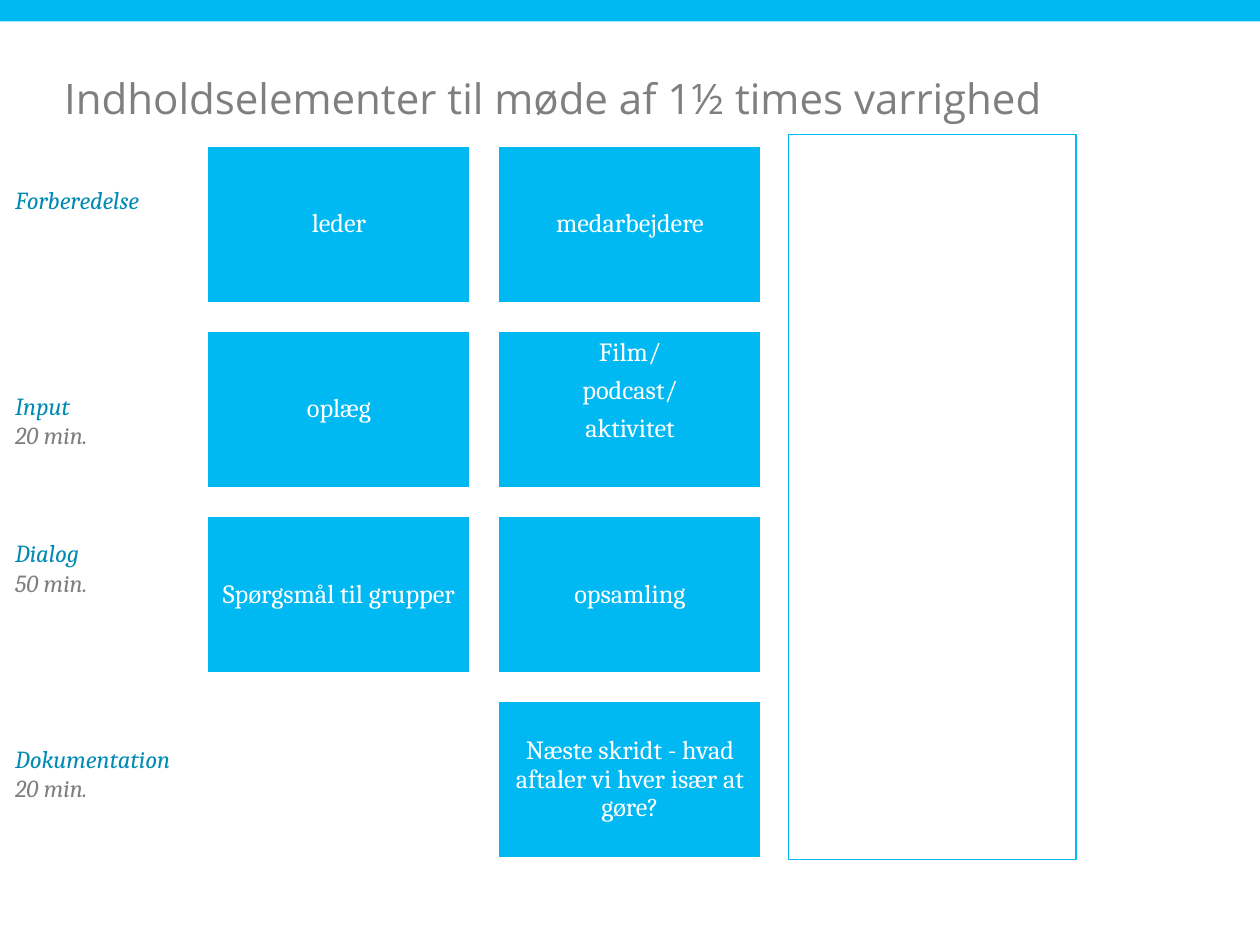
from dataclasses import dataclass

from pptx import Presentation
from pptx import util as u
from pptx.dml.color import RGBColor
from pptx.enum import shapes, text


@dataclass(frozen=True)
class Theme:
    cyan: str = "00B9F2"
    teal: str = "008BB5"
    grey: str = "7F7F7F"
    white: str = "FFFFFF"
    heading_font: str = "Open Sans"
    body_font: str = "Cambria"
    title_size: float = 24
    card_size: float = 15
    label_size: float = 14
    label_line: float = 16.8


class SlideBuilder:
    def __init__(self, s, theme):
        self.s = s
        self.theme = theme

    def style(self, p, name, size, color, italic=False):
        p.font.name = name
        p.font.size = u.Pt(size)
        p.font.italic = italic
        p.font.color.rgb = RGBColor.from_string(color)

    def frame(self, tf, inset=0.0, anchor=text.MSO_ANCHOR.TOP):
        tf.word_wrap = True
        tf.auto_size = text.MSO_AUTO_SIZE.NONE
        tf.vertical_anchor = anchor
        tf.margin_left = tf.margin_right = u.Inches(inset)
        tf.margin_top = tf.margin_bottom = u.Inches(inset)

    def title(self, wording, x, y, w, h):
        sp = self.s.shapes.title
        sp.left, sp.top, sp.width, sp.height = map(u.Inches, (x, y, w, h))
        tf = sp.text_frame
        tf.text = wording
        self.frame(tf)
        p = tf.paragraphs[0]
        p.alignment = text.PP_ALIGN.LEFT
        p.line_spacing = 0.83
        self.style(p, self.theme.heading_font, self.theme.title_size, self.theme.grey)

    def rect(self, x, y, w, h, fill, line=None, line_width=1.0):
        sp = self.s.shapes.add_shape(shapes.MSO_SHAPE.RECTANGLE, *map(u.Inches, (x, y, w, h)))
        sp.shadow.inherit = False
        sp.fill.solid()
        sp.fill.fore_color.rgb = RGBColor.from_string(fill)
        if line:
            sp.line.color.rgb = RGBColor.from_string(line)
            sp.line.width = u.Pt(line_width)
        else:
            sp.line.fill.background()
        return sp

    def card(self, wording, x, y, w, h, lift=0.0):
        """Draw a filled card; lift raises its centred text by that many inches."""
        t = self.theme
        tf = self.rect(x, y, w, h, t.cyan, t.white, 2).text_frame
        self.frame(tf, 0.06, text.MSO_ANCHOR.MIDDLE)
        tf.margin_bottom = u.Inches(0.06 + 2 * lift)
        tf.text = wording
        for p in tf.paragraphs:
            p.alignment = text.PP_ALIGN.CENTER
            p.line_spacing = 0.9
            p.space_after = u.Pt(5.5)
            self.style(p, t.body_font, t.card_size, t.white)

    def agenda(self, phases, x, y, w, h):
        """List phases given as (name, duration, lines of space above)."""
        t = self.theme
        tf = self.s.shapes.add_textbox(*map(u.Inches, (x, y, w, h))).text_frame
        self.frame(tf)
        p = tf.paragraphs[0]
        for i, (name, duration, gap) in enumerate(phases):
            if i:
                p = tf.add_paragraph()
                p.space_before = u.Pt(gap * t.label_line)
            p.text = name
            self.style(p, t.body_font, t.label_size, t.teal, italic=True)
            if duration:
                p = tf.add_paragraph()
                p.text = duration
                self.style(p, t.body_font, t.label_size, t.grey, italic=True)


PHASES = [
    ("Forberedelse", None, 0),
    ("Input", "20 min.", 6),
    ("Dialog", "50 min.", 3),
    ("Dokumentation", "20 min.", 5),
]
CARDS = [
    ("leder", "medarbejdere"),
    ("oplæg", "Film/\npodcast/\naktivitet"),
    ("Spørgsmål til grupper", "opsamling"),
    (None, "Næste skridt - hvad aftaler vi hver især at gøre?"),
]
CARD_W, CARD_H, GAP = 2.1, 1.26, 0.21
GRID_X, GRID_Y = 1.64, 1.15


def main():
    prs = Presentation()
    prs.slide_width, prs.slide_height = u.Inches(10), u.Inches(7.5)
    theme = Theme()
    b = SlideBuilder(prs.slides.add_slide(prs.slide_layouts[5]), theme)

    b.rect(0, 0, 10, 0.17, theme.cyan)
    b.title("Indholdselementer til møde af 1½ times varrighed", 0.51, 0.64, 8.94, 1.22)
    for row, wordings in enumerate(CARDS):
        for col, wording in enumerate(wordings):
            if wording:
                b.card(wording, GRID_X + col * (CARD_W + GAP), GRID_Y + row * (CARD_H + GAP),
                       CARD_W, CARD_H, lift=0.15 if "\n" in wording else 0)
    b.agenda(PHASES, 0.12, 1.47, 1.42, 4.95)
    b.rect(6.26, 1.07, 2.28, 5.75, theme.white, theme.cyan, 0.75)

    prs.save("out.pptx")


if __name__ == "__main__":
    main()
